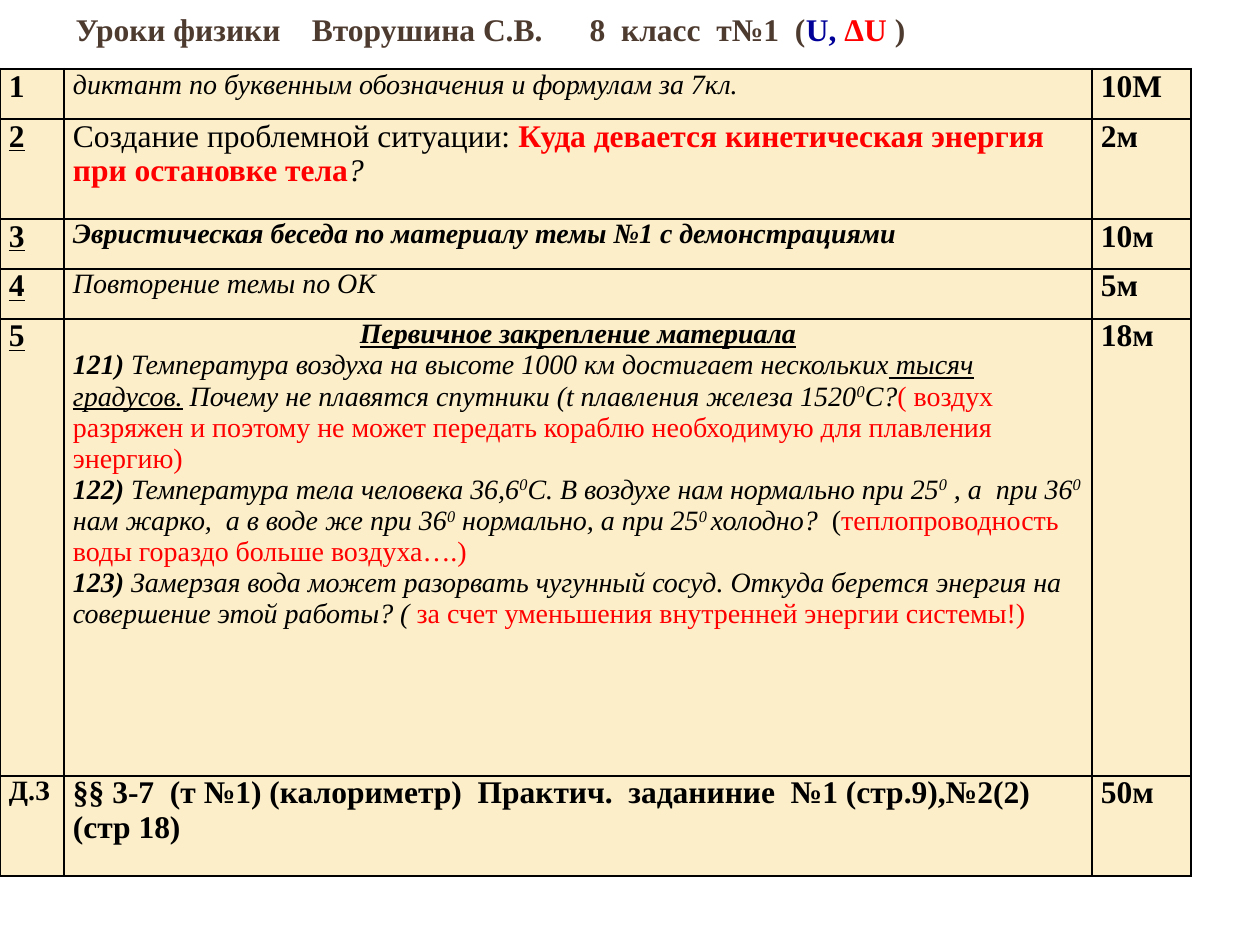
"""Builds a one-slide physics lesson plan with a timed table of stages."""
from dataclasses import dataclass

from lxml import etree
from pptx import Presentation, util as u
from pptx.dml.color import RGBColor
from pptx.enum import text
from pptx.oxml.ns import qn


@dataclass(frozen=True)
class Theme:
    font: str = "Times New Roman"
    large: int = 18
    small: int = 16
    black: str = "000000"
    brown: str = "4E3B30"
    blue: str = "000099"
    red: str = "FF0000"
    cream: str = "FBEEC9"
    thin: float = 1
    thick: float = 1.5


THEME = Theme()
PX_PER_INCH = 126
COLOUR_FLAGS = {"n": THEME.brown, "l": THEME.blue, "r": THEME.red}


def px(length):
    return u.Inches(length / PX_PER_INCH)


class LessonSlide:
    def __init__(self, presentation, theme):
        self.theme = theme
        self.slide = presentation.slides.add_slide(presentation.slide_layouts[5])

    def add_runs(self, paragraph, runs, size):
        for wording, flags in runs:
            run = paragraph.add_run()
            run.text = wording
            font = run.font
            font.name, font.size = self.theme.font, u.Pt(size)
            font.bold, font.italic, font.underline = (flag in flags for flag in "biu")
            colour = next((COLOUR_FLAGS[f] for f in flags if f in COLOUR_FLAGS), self.theme.black)
            font.color.rgb = RGBColor.from_string(colour)
            if "^" in flags:
                run._r.get_or_add_rPr().set("baseline", "30000")

    def title(self, box, runs):
        shape = self.slide.shapes.title
        shape.left, shape.top, shape.width, shape.height = map(px, box)
        frame = shape.text_frame
        frame.auto_size = text.MSO_AUTO_SIZE.NONE
        frame.vertical_anchor = text.MSO_ANCHOR.MIDDLE
        frame.paragraphs[0].alignment = text.PP_ALIGN.LEFT
        self.add_runs(frame.paragraphs[0], runs, self.theme.large)

    def borders(self, cell, widths):
        properties = cell._tc.get_or_add_tcPr()
        for side, width in zip("LRTB", widths):
            line = etree.SubElement(properties, qn(f"a:ln{side}"), w=str(u.Pt(width)))
            fill = etree.SubElement(line, qn("a:solidFill"))
            etree.SubElement(fill, qn("a:srgbClr"), val=self.theme.black)

    def cell(self, cell, size, paragraphs, widths):
        cell.margin_left = cell.margin_right = px(9)
        cell.margin_top = cell.margin_bottom = 0
        self.borders(cell, widths)
        cell.fill.solid()
        cell.fill.fore_color.rgb = RGBColor.from_string(self.theme.cream)
        frame = cell.text_frame
        for index, runs in enumerate(paragraphs):
            paragraph = frame.add_paragraph() if index else frame.paragraphs[0]
            if index == 0 and len(paragraphs) > 1:
                paragraph.alignment = text.PP_ALIGN.CENTER
            self.add_runs(paragraph, runs, size)

    def table(self, left, top, columns, heights, rows):
        frame = self.slide.shapes.add_table(
            len(heights), len(columns), px(left), px(top), px(sum(columns)), px(sum(heights)))
        table = frame.table
        table.first_row = table.horz_banding = False
        for column, width in zip(table.columns, columns):
            column.width = px(width)
        for row, height in zip(table.rows, heights):
            row.height = px(height)
        thin, thick = self.theme.thin, self.theme.thick
        last = len(rows) - 1
        across = [thick, thick] + [thin] * (last - 2) + [thick, thick]
        for r, cells in enumerate(rows):
            down = [thick, thin if r == last else thick, thin, thick]
            for c, (size, paragraphs) in enumerate(cells):
                widths = down[c], down[c + 1], across[r], across[r + 1]
                self.cell(table.cell(r, c), size, paragraphs, widths)


TITLE = [("Уроки физики    Вторушина С.В.      8  класс  т№1  (", "bn"),
         ("U, ", "bl"), ("ΔU ", "br"), (")", "bn")]

PROBLEM = [("Создание проблемной ситуации: ", ""),
           ("Куда девается кинетическая энергия  при остановке тела", "br"), ("?", "i")]

EXERCISES = [
    [("Первичное закрепление материала", "biu")],
    [("121)", "bi"),
     (" Температура воздуха на высоте 1000 км достигает нескольких", "i"),
     (" тысяч градусов.", "iu"),
     (" Почему не плавятся спутники (t плавления железа 1520", "i"), ("0", "i^"), ("С?", "i"),
     ("( воздух разряжен и поэтому не может передать кораблю необходимую "
      "для плавления энергию)", "r")],
    [("122)", "bi"),
     (" Температура тела человека 36,6", "i"), ("0", "i^"),
     ("С. В воздухе нам нормально при 25", "i"), ("0", "i^"),
     (" , а  при 36", "i"), ("0", "i^"),
     (" нам жарко,  а в воде же при 36", "i"), ("0", "i^"),
     (" нормально, а при 25", "i"), ("0 ", "i^"), ("холодно?", "i"), ("  (", ""),
     ("теплопроводность воды гораздо больше воздуха….)", "r")],
    [("123)", "bi"),
     (" Замерзая вода может разорвать чугунный сосуд. Откуда берется энергия "
      "на совершение этой работы? (", "i"),
     (" за счет уменьшения внутренней энергии системы!)", "r")],
]

HOMEWORK = "§§ 3-7  (т №1) (калориметр)  Практич.  заданиние  №1 (стр.9),№2(2) (стр 18)"


def entry(wording, flags="b", size=THEME.large):
    return size, [[(wording, flags)]]


STAGES = [
    [entry("1"),
     entry("диктант по буквенным обозначения и формулам за 7кл.", "i", THEME.small),
     entry("10М")],
    [entry("2", "bu"), (THEME.large, [PROBLEM]), entry("2м")],
    [entry("3", "bu"),
     entry("Эвристическая беседа по материалу темы №1 с демонстрациями", "bi", THEME.small),
     entry("10м")],
    [entry("4", "bu"), entry("Повторение темы по ОК", "i", THEME.small), entry("5м")],
    [entry("5", "bu"), (THEME.small, EXERCISES), entry("18м")],
    [entry("Д.З", size=THEME.small), entry(HOMEWORK), entry("50м")],
]


def main():
    presentation = Presentation()
    presentation.slide_width, presentation.slide_height = px(1260), px(945)
    lesson = LessonSlide(presentation, THEME)
    lesson.title((63, 0, 872, 57), TITLE)
    lesson.table(0, 69, [64, 1028, 99], [50, 100, 50, 50, 457, 100], STAGES)
    presentation.save("out.pptx")


if __name__ == "__main__":
    main()
